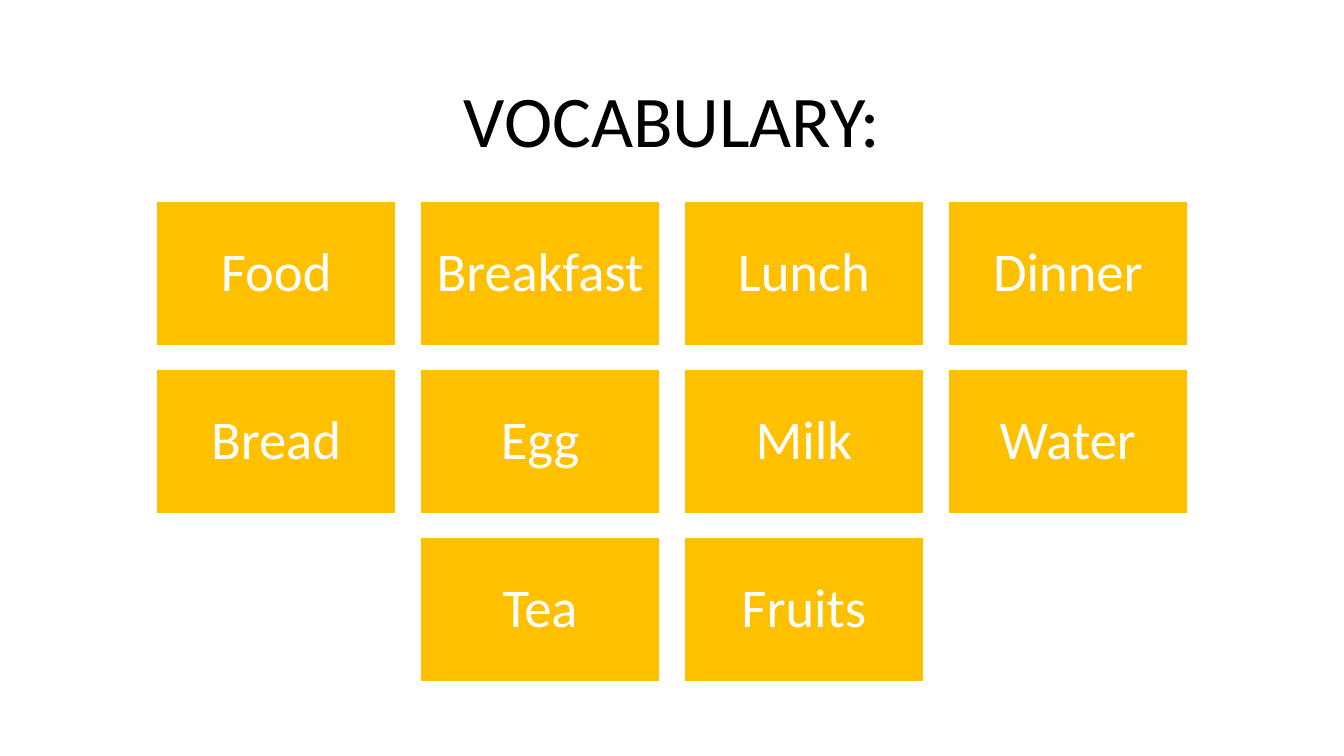
from pptx import Presentation
from pptx.dml.color import RGBColor
from pptx.enum import shapes, text
from pptx.util import Pt


def color(code):
    return RGBColor.from_string(code)


class Board:
    font = "Calibri"
    ink = "000000"
    paper = "FFFFFF"
    gold = "FFC000"

    def __init__(self, slide):
        self.slide = slide

    def label(self, shape, words, size, tint, inset):
        frame = shape.text_frame
        frame.word_wrap = True
        frame.vertical_anchor = text.MSO_ANCHOR.MIDDLE
        frame.margin_left = frame.margin_right = Pt(inset)
        frame.margin_top = frame.margin_bottom = Pt(inset)
        para = frame.paragraphs[0]
        para.text = words
        para.alignment = text.PP_ALIGN.CENTER
        para.line_spacing = 0.9
        para.font.name = self.font
        para.font.size = Pt(size)
        para.font.color.rgb = color(tint)

    def title(self, words, *place):
        box = self.slide.shapes.add_textbox(*map(Pt, place))
        self.label(box, words, 52, self.ink, 7.2)

    def card(self, word, *place):
        card = self.slide.shapes.add_shape(
            shapes.MSO_SHAPE.RECTANGLE, *map(Pt, place))
        card.shadow.inherit = False
        card.fill.solid()
        card.fill.fore_color.rgb = color(self.gold)
        card.line.color.rgb = color(self.paper)
        card.line.width = Pt(1)
        self.label(card, word, 39, self.paper, 11.5)

    def grid(self, rows, top, width, height, gap):
        step = width + gap
        for r, row in enumerate(rows):
            left = 480 - (len(row) * step - gap) / 2
            for c, word in enumerate(row):
                self.card(word, left + c * step, top + r * (height + gap),
                          width, height)


def main():
    deck = Presentation()
    deck.slide_width, deck.slide_height = Pt(960), Pt(540)
    board = Board(deck.slides.add_slide(deck.slide_layouts[6]))
    board.title("VOCABULARY:", 66, 44, 828, 89)
    words = [
        ["Food", "Breakfast", "Lunch", "Dinner"],
        ["Bread", "Egg", "Milk", "Water"],
        ["Tea", "Fruits"],
    ]
    board.grid(words, 144, 171.4, 102.8, 17.1)
    deck.save("out.pptx")


if __name__ == "__main__":
    main()
